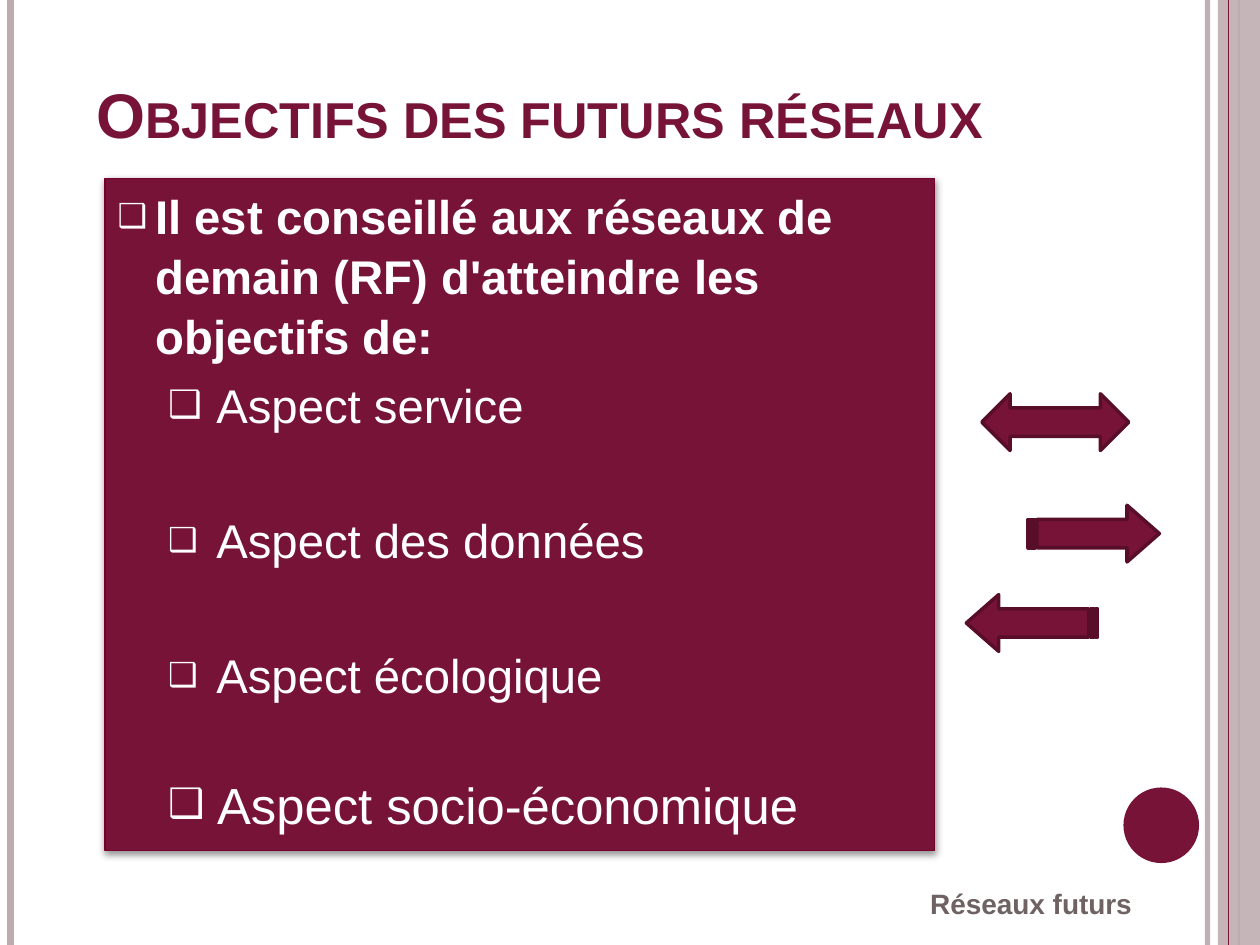
from lxml.etree import SubElement
from pptx import Presentation
from pptx.dml.color import RGBColor
from pptx.enum.shapes import MSO_CONNECTOR, MSO_SHAPE
from pptx.enum.text import MSO_ANCHOR, MSO_AUTO_SIZE, PP_ALIGN
from pptx.oxml.ns import qn
from pptx.util import Pt

COLORS = {
    "wine": "771337",
    "dark": "580E29",
    "border": "76002B",
    "rose": "BDABAE",
    "gray": "6E6263",
    "white": "FFFFFF",
    "black": "000000",
}
WIDTH, HEIGHT = 720, 540


class SlideBuilder:
    font = "Arial"

    def __init__(self, slide):
        self.slide = slide

    def color(self, name):
        return RGBColor.from_string(COLORS[name])

    def place(self, shape, box):
        shape.left, shape.top, shape.width, shape.height = map(Pt, box)

    def alpha(self, parent, percent):
        color = next(parent.iter(qn("a:srgbClr")))
        SubElement(color, qn("a:alpha"), val=str(percent * 1000))

    def run(self, paragraph, text, size, color, bold=True):
        run = paragraph.add_run()
        run.text = text
        run.font.name = self.font
        run.font.size = Pt(size)
        run.font.bold = bold
        run.font.color.rgb = self.color(color)
        return run

    def stripe(self, x, width, color, opacity=100):
        line = self.slide.shapes.add_connector(
            MSO_CONNECTOR.STRAIGHT, Pt(x), Pt(0), Pt(x), Pt(HEIGHT))
        line.line.width = Pt(width)
        line.line.color.rgb = self.color(color)
        properties = line._element.spPr
        if opacity < 100:
            self.alpha(properties, opacity)
        SubElement(properties, qn("a:effectLst"))

    def shape(self, kind, box, fill, border=None, opacity=100, rotation=0, adjustments=()):
        shape = self.slide.shapes.add_shape(kind, *map(Pt, box))
        shape.shadow.inherit = False
        shape.fill.solid()
        shape.fill.fore_color.rgb = self.color(fill)
        if opacity < 100:
            self.alpha(shape._element.spPr, opacity)
        if border:
            shape.line.color.rgb = self.color(border)
            shape.line.width = Pt(2)
        else:
            shape.line.fill.background()
        shape.rotation = rotation
        for index, value in enumerate(adjustments):
            shape.adjustments[index] = value

    def title(self, text, box):
        title = self.slide.shapes.title
        self.place(title, box)
        frame = title.text_frame
        frame.auto_size = MSO_AUTO_SIZE.NONE
        frame.vertical_anchor = MSO_ANCHOR.BOTTOM
        paragraph = frame.paragraphs[0]
        paragraph.alignment = PP_ALIGN.LEFT
        run = self.run(paragraph, text, 36, "wine")
        run._r.get_or_add_rPr().set("cap", "small")

    def bullet(self, paragraph, indent, percent):
        properties = paragraph._p.get_or_add_pPr()
        properties.set("marL", str(Pt(indent)))
        properties.set("indent", str(Pt(-21.6)))
        color = SubElement(properties, qn("a:buClr"))
        SubElement(color, qn("a:srgbClr"), val=COLORS["white"])
        SubElement(properties, qn("a:buSzPct"), val=str(percent * 1000))
        SubElement(properties, qn("a:buFont"), typeface=self.font)
        SubElement(properties, qn("a:buChar"), char="❑")

    def soft_shadow(self, shape):
        effects = SubElement(shape._element.spPr, qn("a:effectLst"))
        shadow = SubElement(effects, qn("a:outerShdw"), blurRad=str(Pt(4)),
                            dist=str(Pt(1.6)), dir="5400000", rotWithShape="0")
        SubElement(shadow, qn("a:srgbClr"), val=COLORS["black"])
        self.alpha(shadow, 42)

    def body(self, items, box):
        body = self.slide.placeholders[1]
        self.place(body, box)
        body.fill.solid()
        body.fill.fore_color.rgb = self.color("wine")
        body.line.color.rgb = self.color("border")
        body.line.width = Pt(1)
        self.soft_shadow(body)
        frame = body.text_frame
        frame.auto_size = MSO_AUTO_SIZE.NONE
        frame.vertical_anchor = MSO_ANCHOR.TOP
        for index, (text, level, size, percent, space) in enumerate(items):
            paragraph = frame.add_paragraph() if index else frame.paragraphs[0]
            paragraph.level = level
            paragraph.line_spacing = 1.05
            paragraph.space_before = Pt(space)
            self.bullet(paragraph, 50.4 if level else 21.6, percent)
            self.run(paragraph, text, size, "white", bold=level == 0)

    def footer(self, text, box):
        frame = self.slide.shapes.add_textbox(*map(Pt, box)).text_frame
        frame.word_wrap = True
        frame.vertical_anchor = MSO_ANCHOR.MIDDLE
        paragraph = frame.paragraphs[0]
        paragraph.alignment = PP_ALIGN.CENTER
        self.run(paragraph, text, 16, "gray")


def main():
    presentation = Presentation()
    presentation.slide_width, presentation.slide_height = Pt(WIDTH), Pt(HEIGHT)
    slide = presentation.slides.add_slide(presentation.slide_layouts[1])
    builder = SlideBuilder(slide)

    builder.stripe(690, 3, "rose", opacity=93)
    builder.stripe(6, 4.5, "rose")
    builder.stripe(708, 1.5, "rose")
    builder.shape(MSO_SHAPE.RECTANGLE, (696, 0, 24, HEIGHT), "rose", opacity=87)
    builder.stripe(702, 0.75, "wine")
    builder.shape(MSO_SHAPE.OVAL, (642, 450, 43.2, 43.2), "wine")

    builder.title("Objectifs des futurs réseaux", (48, 0, 588, 90))
    builder.body([
        ("Il est conseillé aux réseaux de demain (RF) d'atteindre les objectifs de:", 0, 27, 70, 6),
        (" Aspect service", 1, 27, 80, 5.4),
        (" Aspect des données", 1, 27, 70, 43.4),
        (" Aspect écologique", 1, 27, 70, 43),
        (" Aspect socio-économique", 1, 29, 80, 38.5),
    ], (60, 102, 474, 384))
    builder.footer("Réseaux futurs", (492, 498, 194.4, 36))

    builder.shape(MSO_SHAPE.LEFT_RIGHT_ARROW, (561, 225, 84, 32.4), "wine", "dark")
    for left, top, rotation in ((587.5, 288.7, 0), (552.2, 339.8, 180)):
        builder.shape(MSO_SHAPE.STRIPED_RIGHT_ARROW, (left, top, 75, 32.4), "wine", "dark",
                      rotation=rotation, adjustments=(0.5, 0.57))

    presentation.save("out.pptx")


if __name__ == "__main__":
    main()
